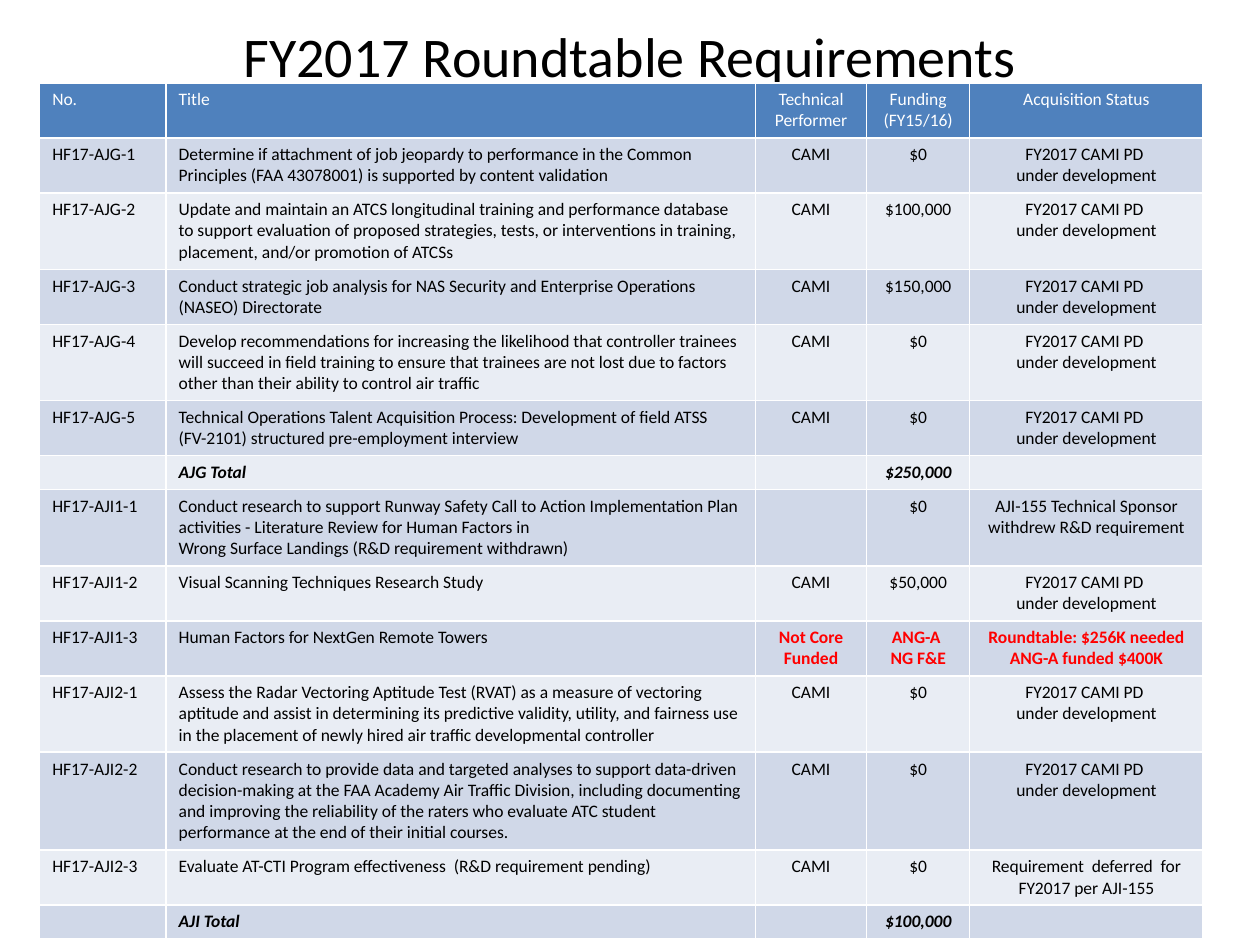
from dataclasses import dataclass

from lxml.etree import SubElement
from pptx import Presentation
from pptx.dml.color import RGBColor
from pptx.enum.text import MSO_ANCHOR as Anchor, PP_ALIGN as Align
from pptx.oxml.ns import qn
from pptx.slide import Slide
from pptx.table import Table
from pptx.text.text import TextFrame
from pptx.util import Cm, Pt

FONT = "Calibri"
BLACK = RGBColor(0x00, 0x00, 0x00)
WHITE = RGBColor(0xFF, 0xFF, 0xFF)
RED = RGBColor(0xFF, 0x00, 0x00)
HEADER_BLUE = RGBColor(0x4F, 0x81, 0xBD)
BANDS = (RGBColor(0xE9, 0xED, 0xF4), RGBColor(0xD0, 0xD8, 0xE8))

COLUMN_WIDTHS = (2.55, 11.88, 2.24, 2.08, 4.7)
ALIGNMENTS = (Align.LEFT, Align.LEFT, Align.CENTER, Align.CENTER, Align.CENTER)
LINE_HEIGHT, ROW_PADDING = 0.43, 0.25
IN_WORK = "FY2017 CAMI PD \nunder development"


@dataclass
class Requirement:
    number: str
    title: str
    funding: str
    lines: int = 2
    performer: str = "CAMI"
    status: str = IN_WORK
    is_total: bool = False
    is_alert: bool = False


def total(title: str, funding: str) -> Requirement:
    return Requirement("", title, funding, 1, "", "", is_total=True)


HEADER = Requirement("No.", "Title", "Funding\n(FY15/16)",
                     performer="Technical Performer", status="Acquisition Status")
REQUIREMENTS = (
    Requirement("HF17-AJG-1", "Determine if attachment of job jeopardy to performance in the "
                "Common Principles (FAA 43078001) is supported by content validation", "$0"),
    Requirement("HF17-AJG-2", "Update and maintain an ATCS longitudinal training and performance "
                "database to support evaluation of proposed strategies, tests, or interventions "
                "in training, placement, and/or promotion of ATCSs", "$100,000", 3),
    Requirement("HF17-AJG-3", "Conduct strategic job analysis for NAS Security and Enterprise "
                "Operations (NASEO) Directorate", "$150,000"),
    Requirement("HF17-AJG-4", "Develop recommendations for increasing the likelihood that "
                "controller trainees will succeed in field training to ensure that trainees are "
                "not lost due to factors other than their ability to control air traffic", "$0", 3),
    Requirement("HF17-AJG-5", "Technical Operations Talent Acquisition Process: Development of "
                "field ATSS (FV-2101) structured pre-employment interview", "$0"),
    total("AJG Total", "$250,000"),
    Requirement("HF17-AJI1-1", "Conduct research to support Runway Safety Call to Action "
                "Implementation Plan activities - Literature Review for Human Factors in \n"
                "Wrong Surface Landings (R&D requirement withdrawn)", "$0", 3, performer="",
                status="AJI-155 Technical Sponsor withdrew R&D requirement"),
    Requirement("HF17-AJI1-2", "Visual Scanning Techniques Research Study", "$50,000"),
    Requirement("HF17-AJI1-3", "Human Factors for NextGen Remote Towers", "ANG-A \nNG F&E",
                performer="Not Core Funded",
                status="Roundtable: $256K needed\nANG-A funded $400K", is_alert=True),
    Requirement("HF17-AJI2-1", "Assess the Radar Vectoring Aptitude Test (RVAT) as a measure of "
                "vectoring aptitude and assist in determining its predictive validity, utility, "
                "and fairness use in the placement of newly hired air traffic developmental "
                "controller", "$0", 3),
    Requirement("HF17-AJI2-2", "Conduct research to provide data and targeted analyses to support "
                "data-driven decision-making at the FAA Academy Air Traffic Division, including "
                "documenting and improving the reliability of the raters who evaluate ATC student "
                "performance at the end of their initial courses.", "$0", 4),
    Requirement("HF17-AJI2-3", "Evaluate AT-CTI Program effectiveness  (R&D requirement pending)",
                "$0", status="Requirement  deferred  for FY2017 per AJI-155"),
    total("AJI Total", "$100,000"),
)


def write_text(frame: TextFrame, text: str, *, size: int = 10, color: RGBColor = BLACK,
               align: Align = Align.LEFT, bold: bool = False, italic: bool = False) -> None:
    para = frame.paragraphs[0]
    para.alignment = align
    if not text:
        # An empty cell needs its own text size, or its row would grow
        SubElement(para._p, qn("a:endParaRPr"), sz=str(size * 100))
        return
    for index, line in enumerate(text.split("\n")):
        if index:
            para.add_line_break()
        span = para.add_run()
        span.text = line
        span.font.name, span.font.size = FONT, Pt(size)
        span.font.bold, span.font.italic = bold, italic
        span.font.color.rgb = color


def row_height(lines: int) -> Cm:
    return Cm(ROW_PADDING + LINE_HEIGHT * lines)


def fill_row(table: Table, index: int, entry: Requirement) -> None:
    table.rows[index].height = row_height(entry.lines)
    values = (entry.number, entry.title, entry.performer, entry.funding, entry.status)
    for column, (value, align) in enumerate(zip(values, ALIGNMENTS)):
        cell = table.cell(index, column)
        cell.fill.solid()
        cell.fill.fore_color.rgb = BANDS[index % 2] if index else HEADER_BLUE
        alert = entry.is_alert and column >= 2
        color = RED if alert else BLACK if index else WHITE
        write_text(cell.text_frame, value, color=color, align=align,
                   bold=alert or entry.is_total, italic=entry.is_total)


def add_title(page: Slide, text: str) -> None:
    box = page.shapes.add_textbox(Cm(1.27), Cm(-0.48), Cm(22.86), Cm(3.18))
    box.text_frame.word_wrap = True
    box.text_frame.vertical_anchor = Anchor.MIDDLE
    write_text(box.text_frame, text, size=32, align=Align.CENTER)


def add_requirements(page: Slide) -> None:
    entries = (HEADER, *REQUIREMENTS)
    height = sum(row_height(entry.lines) for entry in entries)
    table = page.shapes.add_table(len(entries), len(COLUMN_WIDTHS), Cm(0.8), Cm(1.67),
                                  Cm(sum(COLUMN_WIDTHS)), height).table
    for column, width in zip(table.columns, COLUMN_WIDTHS):
        column.width = Cm(width)
    for index, entry in enumerate(entries):
        fill_row(table, index, entry)


def main() -> None:
    deck = Presentation()
    deck.slide_width, deck.slide_height = Cm(25.4), Cm(19.05)
    page = deck.slides.add_slide(deck.slide_layouts[6])

    # Title, then the table over its lower edge
    add_title(page, "FY2017 Roundtable Requirements")
    add_requirements(page)

    deck.save("out.pptx")


if __name__ == "__main__":
    main()
